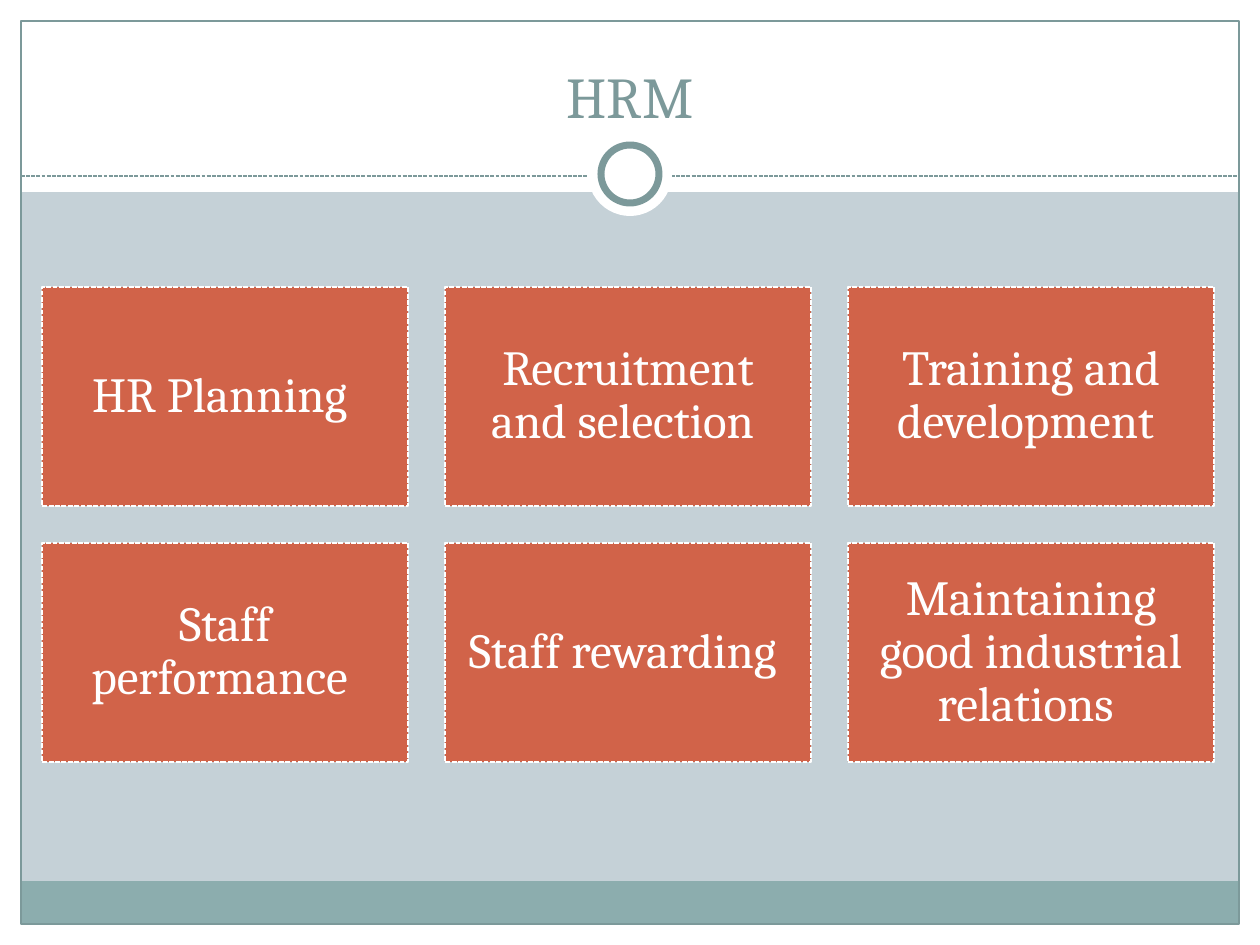
from lxml import etree
from pptx import Presentation
from pptx import util as u
from pptx.dml.color import RGBColor
from pptx.enum import dml, shapes, text
from pptx.oxml.ns import qn

WHITE = RGBColor(0xFF, 0xFF, 0xFF)
MIST = RGBColor(0xC5, 0xD1, 0xD7)
TEAL = RGBColor(0x8C, 0xAD, 0xAE)
SLATE = RGBColor(0x7C, 0x99, 0x9A)
RUST = RGBColor(0xD1, 0x63, 0x49)

FUNCTIONS = [
    "HR Planning ", "Recruitment and selection ", "Training and development ",
    "Staff performance ", "Staff rewarding ", "Maintaining good industrial relations ",
]
COLUMNS = 3
TILE_W, TILE_H, GAP = 366, 219, 37
TILES_X, TILES_Y = 42, 287


def px(n):
    return u.Emu(round(n * u.Inches(1) / 126))


class Deck:
    font = "Cambria"

    def __init__(self, w, h):
        self.prs = Presentation()
        self.prs.slide_width, self.prs.slide_height = px(w), px(h)
        self.slide = self.prs.slides.add_slide(self.prs.slide_layouts[5])

    def background(self, color):
        fill = self.slide.background.fill
        fill.solid()
        fill.fore_color.rgb = color

    def stroke(self, line, color, width, dashed=False):
        line.color.rgb = color
        line.width = u.Pt(width)
        if dashed:
            line.dash_style = dml.MSO_LINE.SQUARE_DOT

    def shape(self, x, y, w, h, fill=None, line=None, width=0.75, dashed=False,
              kind=shapes.MSO_SHAPE.RECTANGLE):
        sp = self.slide.shapes.add_shape(kind, px(x), px(y), px(w), px(h))
        sp.shadow.inherit = False
        if fill is None:
            sp.fill.background()
        else:
            sp.fill.solid()
            sp.fill.fore_color.rgb = fill
        if line is None:
            sp.line.fill.background()
        else:
            self.stroke(sp.line, line, width, dashed)
        return sp

    def circle(self, cx, cy, d, **style):
        return self.shape(cx - d // 2, cy - d // 2, d, d,
                          kind=shapes.MSO_SHAPE.OVAL, **style)

    def rule(self, x1, x2, y, color):
        cxn = self.slide.shapes.add_connector(
            shapes.MSO_CONNECTOR.STRAIGHT, px(x1), px(y), px(x2), px(y))
        self.stroke(cxn.line, color, 0.75, dashed=True)
        etree.SubElement(cxn._element.spPr, qn("a:effectLst"))

    def label(self, sp, words, size, color, anchor):
        tf = sp.text_frame
        tf.text = words
        tf.word_wrap = True
        tf.vertical_anchor = anchor
        p = tf.paragraphs[0]
        p.alignment = text.PP_ALIGN.CENTER
        for r in p.runs:
            r.font.name = self.font
            r.font.size = u.Pt(size)
            r.font.color.rgb = color
        return tf

    def title(self, words, x, y, w, h):
        sp = self.slide.shapes.title
        sp.left, sp.top, sp.width, sp.height = px(x), px(y), px(w), px(h)
        self.label(sp, words, 33, SLATE, text.MSO_ANCHOR.BOTTOM)
        sp._element.getparent().append(sp._element)

    def tile(self, words, x, y, w, h):
        sp = self.shape(x, y, w, h, RUST, WHITE, 0.9, dashed=True)
        tf = self.label(sp, words, 28, WHITE, text.MSO_ANCHOR.MIDDLE)
        tf.margin_left = tf.margin_right = tf.margin_top = tf.margin_bottom = px(15)
        tf.paragraphs[0].line_spacing = 0.9


def main():
    deck = Deck(1260, 945)
    deck.background(MIST)
    for box in [(0, 924, 1260, 21), (0, 0, 1260, 192),
                (0, 0, 21, 945), (1239, 0, 21, 945)]:
        deck.shape(*box, fill=WHITE)
    deck.shape(21, 881, 1218, 43, fill=TEAL)
    deck.shape(21, 21, 1218, 903, line=SLATE)
    deck.rule(21, 1239, 176, SLATE)
    deck.circle(630, 174, 84, fill=WHITE)
    deck.circle(630, 174, 58, fill=WHITE, line=SLATE, width=4)
    deck.title("HRM", 42, 32, 1176, 104)
    for i, name in enumerate(FUNCTIONS):
        row, col = divmod(i, COLUMNS)
        deck.tile(name, TILES_X + col * (TILE_W + GAP),
                  TILES_Y + row * (TILE_H + GAP), TILE_W, TILE_H)
    deck.prs.save("out.pptx")


if __name__ == "__main__":
    main()
